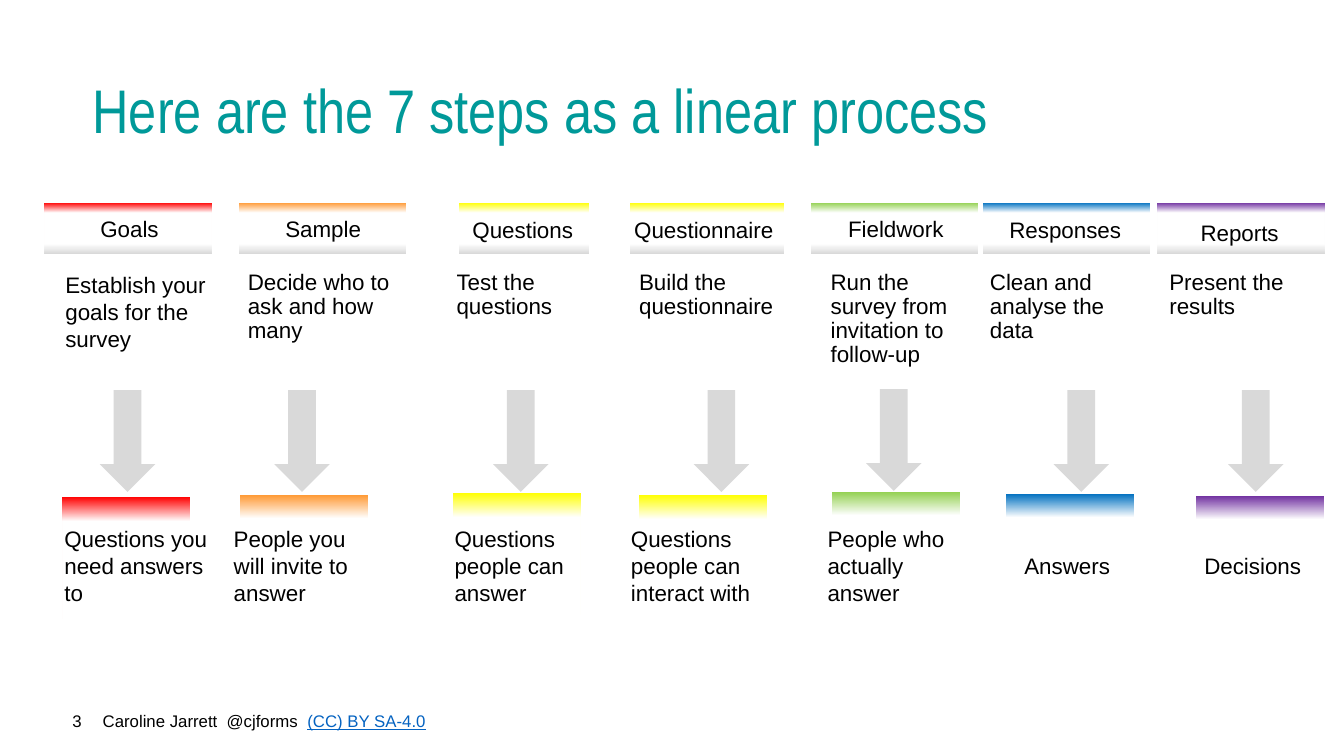
from dataclasses import dataclass

from lxml import etree
from pptx import Presentation
from pptx.dml.color import RGBColor
from pptx.enum.shapes import MSO_SHAPE
from pptx.enum.text import MSO_ANCHOR, PP_ALIGN
from pptx.oxml.ns import qn
from pptx.util import Inches, Pt

RECTANGLE = MSO_SHAPE.RECTANGLE
DOWN_ARROW = MSO_SHAPE.DOWN_ARROW
TOP, MIDDLE = MSO_ANCHOR.TOP, MSO_ANCHOR.MIDDLE
LEFT, CENTER, RIGHT = PP_ALIGN.LEFT, PP_ALIGN.CENTER, PP_ALIGN.RIGHT

BLACK = RGBColor(0x00, 0x00, 0x00)
WHITE = RGBColor(0xFF, 0xFF, 0xFF)
GRAY = RGBColor(0xD9, 0xD9, 0xD9)
TEAL = RGBColor(0x00, 0x99, 0x99)
LINK_BLUE = RGBColor(0x05, 0x63, 0xC1)
RED = RGBColor(0xFF, 0x00, 0x00)
ORANGE = RGBColor(0xFF, 0x99, 0x33)
YELLOW = RGBColor(0xFF, 0xFF, 0x00)
GREEN = RGBColor(0x92, 0xD0, 0x50)
BLUE = RGBColor(0x00, 0x70, 0xC0)
PURPLE = RGBColor(0x70, 0x30, 0xA0)


@dataclass
class Step:
    color: RGBColor
    name: str
    action: str
    result: str
    header: tuple
    name_box: tuple
    action_box: tuple
    arrow: tuple
    bar: tuple
    result_left: float
    action_spacing: float = 0.9
    result_align: PP_ALIGN = LEFT
    result_anchor: MSO_ANCHOR = TOP


STEPS = [
    Step(RED, "Goals", "Establish your goals for the survey",
         "Questions you need answers to",
         (0.44, 1.66), (0.47, 2.09, 1.63), (0.55, 1.63),
         (0.99, 3.87), (0.62, 4.93, 1.21), 0.54, action_spacing=1.0),
    Step(ORANGE, "Sample", "Decide who to ask and how many",
         "People you will invite to answer",
         (2.37, 1.66), (2.39, 2.09, 1.63), (2.36, 1.63),
         (2.72, 3.87), (2.38, 4.91, 1.17), 2.22),
    Step(YELLOW, "Questions", "Test the questions",
         "Questions people can answer",
         (4.55, 1.29), (4.37, 2.1, 1.63), (4.43, 1.63),
         (4.89, 3.87), (4.49, 4.89, 1.21), 4.41),
    Step(YELLOW, "Questionnaire", "Build the questionnaire",
         "Questions people can interact with",
         (6.25, 1.53), (6.04, 2.1, 1.88), (6.24, 1.88),
         (6.88, 3.87), (6.34, 4.91, 1.21), 6.16),
    Step(GREEN, "Fieldwork", "Run the survey from invitation to follow-up",
         "People who actually answer",
         (8.04, 1.66), (8.07, 2.09, 1.63), (8.14, 1.63),
         (8.59, 3.86), (8.25, 4.88, 1.17), 8.11),
    Step(BLUE, "Responses", "Clean and analyse the data", "Answers",
         (9.75, 1.66), (9.75, 2.1, 1.63), (9.72, 1.63),
         (10.45, 3.87), (9.98, 4.9, 1.17), 9.77,
         result_align=CENTER, result_anchor=MIDDLE),
    Step(PURPLE, "Reports", "Present the results", "Decisions",
         (11.48, 1.66), (11.48, 2.12, 1.63), (11.5, 1.63),
         (12.18, 3.87), (11.86, 4.92, 1.17), 11.61,
         result_align=CENTER, result_anchor=MIDDLE),
]


def add_run(paragraph, text, *, size=16, font="Arial", color=BLACK,
            underline=None):
    run = paragraph.add_run()
    run.text = text
    run.font.size = Pt(size)
    run.font.name = font
    run.font.color.rgb = color
    run.font.underline = underline


class SlideBuilder:
    font = "Arial"

    def __init__(self, slide):
        self.slide = slide

    def text(self, box, *runs, align=LEFT, anchor=TOP, spacing=1.0,
             **text_format):
        shape = self.slide.shapes.add_textbox(*map(Inches, box))
        frame = shape.text_frame
        frame.word_wrap = True
        frame.vertical_anchor = anchor
        paragraph = frame.paragraphs[0]
        paragraph.alignment = align
        paragraph.line_spacing = spacing
        for text, run_format in runs:
            add_run(paragraph, text,
                    **{"font": self.font, **text_format, **run_format})

    def shape(self, kind, box):
        shape = self.slide.shapes.add_shape(kind, *map(Inches, box))
        shape.shadow.inherit = False
        shape.line.fill.background()
        return shape

    def arrow(self, left, top):
        shape = self.shape(DOWN_ARROW, (left, top, 0.55, 1.01))
        shape.fill.solid()
        shape.fill.fore_color.rgb = GRAY

    def gradient(self, box, stops):
        shape = self.shape(RECTANGLE, box)
        shape.fill.gradient()
        shape.fill.gradient_angle = 270
        stop_list = shape.element.spPr.find(qn("a:gradFill")).find(qn("a:gsLst"))
        for stop in list(stop_list):
            stop_list.remove(stop)
        for percent, color in stops:
            stop = etree.SubElement(stop_list, qn("a:gs"),
                                    pos=str(percent * 1000))
            etree.SubElement(stop, qn("a:srgbClr"), val=str(color))

    def step(self, step):
        fade = [(0, step.color), (20, WHITE)]
        bar_left, bar_top, bar_height = step.bar
        self.gradient((bar_left, bar_top, 1.27, bar_height), fade)
        self.arrow(*step.arrow)
        header_left, header_width = step.header
        self.gradient((header_left, 2.01, header_width, 0.51),
                      fade + [(80, WHITE), (100, GRAY)])
        self.text((*step.name_box, 0.37), (step.name, {}), align=CENTER)
        action_left, action_width = step.action_box
        self.text((action_left, 2.64, action_width, 0.91), (step.action, {}),
                  spacing=step.action_spacing)
        self.text((step.result_left, 5.16, 1.63, 0.91), (step.result, {}),
                  align=step.result_align, anchor=step.result_anchor)


def main():
    presentation = Presentation()
    presentation.slide_width = Inches(13.33)
    presentation.slide_height = Inches(7.5)
    slide = presentation.slides.add_slide(presentation.slide_layouts[6])
    builder = SlideBuilder(slide)
    builder.text((0.92, 7, 5.71, 0.3),
                 ("Caroline Jarrett  @cjforms  ", {}),
                 ("(CC) BY SA-4.0", {"color": LINK_BLUE, "underline": True}),
                 size=12)
    builder.text((0.31, 7, 0.6, 0.3), ("3", {}), size=12, align=RIGHT)
    builder.text((0.82, 0.4, 11.6, 1.45),
                 ("Here are the 7 steps as a linear process", {}),
                 size=44, font="Arial Narrow", color=TEAL,
                 anchor=MIDDLE, spacing=0.9)
    for step in STEPS:
        builder.step(step)
    presentation.save("out.pptx")


if __name__ == "__main__":
    main()
